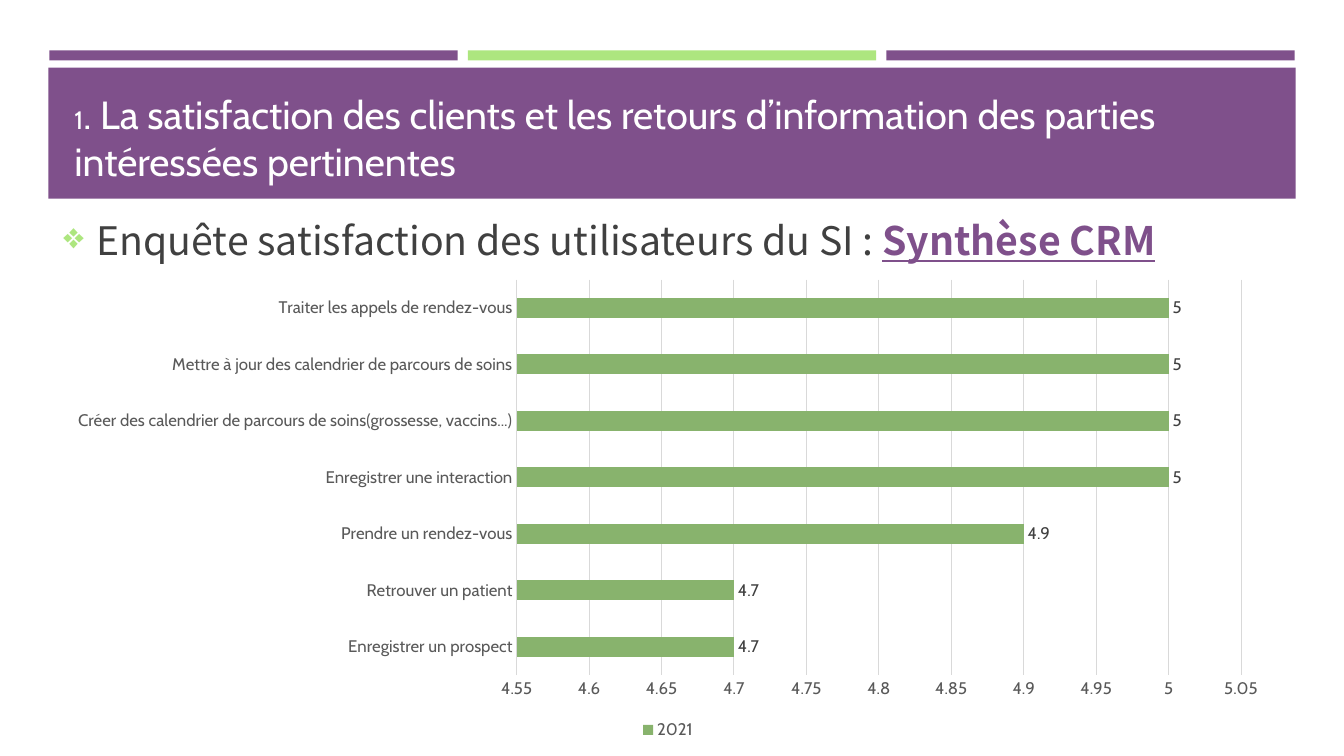
from lxml import etree
from pptx import Presentation
from pptx.chart.data import CategoryChartData
from pptx.dml.color import RGBColor
from pptx.enum import chart as ch, shapes, text
from pptx.oxml.ns import qn
from pptx.util import Inches, Pt

PURPLE, LIME, GREEN = "7F508B", "ADE67F", "88B36D"
WHITE, DARK, GREY, PALE = "FFFFFF", "404040", "595959", "D9D9D9"
SANS, NOTO = "Cabin", "Noto Sans CJK KR"

SCORES = [
    ("Enregistrer un prospect", 4.7),
    ("Retrouver un patient", 4.7),
    ("Prendre un rendez-vous", 4.9),
    ("Enregistrer une interaction", 5),
    ("Créer des calendrier de parcours de soins(grossesse, vaccins...)", 5),
    ("Mettre à jour des calendrier de parcours de soins", 5),
    ("Traiter les appels de rendez-vous", 5),
]


def paint(color, tint):
    color.rgb = RGBColor.from_string(tint)


def style(font, size, tint, face=SANS):
    font.size, font.name = Pt(size), face
    paint(font.color, tint)


def add_bar(slide, x, y, w, h, tint):
    bar = slide.shapes.add_shape(
        shapes.MSO_SHAPE.RECTANGLE, Inches(x), Inches(y), Inches(w), Inches(h))
    bar.shadow.inherit = False
    bar.fill.solid()
    paint(bar.fill.fore_color, tint)
    bar.line.fill.background()


def add_text(slide, x, y, w, h, anchor):
    """Add a wrapping text box and return its first paragraph."""
    box = slide.shapes.add_textbox(Inches(x), Inches(y), Inches(w), Inches(h))
    frame = box.text_frame
    frame.word_wrap = True
    frame.vertical_anchor = anchor
    return frame.paragraphs[0]


def add_run(para, words, size, tint, face=SANS):
    run = para.add_run()
    run.text = words
    style(run.font, size, tint, face)
    return run


def add_bullet(para, sign, tint, size, indent):
    props = para._p.get_or_add_pPr()
    props.set("marL", str(Inches(indent)))
    props.set("indent", str(-Inches(indent)))
    color = etree.SubElement(props, qn("a:buClr"))
    etree.SubElement(color, qn("a:srgbClr")).set("val", tint)
    etree.SubElement(props, qn("a:buSzPct")).set("val", str(size * 1000))
    etree.SubElement(props, qn("a:buChar")).set("char", sign)


def style_axis(axis):
    axis.major_tick_mark = axis.minor_tick_mark = ch.XL_TICK_MARK.NONE
    style(axis.tick_labels.font, 12, GREY)


def rule(line):
    line.width = Pt(0.75)
    paint(line.color, PALE)


def add_scores(slide, x, y, w, h):
    data = CategoryChartData()
    data.categories = [name for name, _ in SCORES]
    data.add_series("2021", [score for _, score in SCORES])
    chart = slide.shapes.add_chart(
        ch.XL_CHART_TYPE.BAR_CLUSTERED, Inches(x), Inches(y),
        Inches(w), Inches(h), data).chart
    style(chart.font, 10, "000000")
    chart.has_title = False

    # Axes
    cats, vals = chart.category_axis, chart.value_axis
    style_axis(cats)
    rule(cats.format.line)
    style_axis(vals)
    vals.format.line.fill.background()
    vals.minimum_scale, vals.maximum_scale, vals.major_unit = 4.55, 5.05, 0.05
    vals.has_major_gridlines = True
    rule(vals.major_gridlines.format.line)

    # Legend
    chart.has_legend = True
    chart.legend.position = ch.XL_LEGEND_POSITION.BOTTOM
    chart.legend.include_in_layout = False
    style(chart.legend.font, 12, GREY)

    # Bars and their labels
    plot = chart.plots[0]
    plot.gap_width = 182
    plot.vary_by_categories = False
    series = plot.series[0]
    series.format.fill.solid()
    paint(series.format.fill.fore_color, GREEN)
    labels = series.data_labels
    labels.show_value = True
    labels.position = ch.XL_LABEL_POSITION.OUTSIDE_END
    style(labels.font, 12, DARK)


def main():
    deck = Presentation()
    deck.slide_width, deck.slide_height = Inches(13.33), Inches(7.5)
    slide = deck.slides.add_slide(deck.slide_layouts[6])

    # Header bands
    for col, tint in enumerate([PURPLE, LIME, PURPLE]):
        add_bar(slide, 0.49 + 4.15 * col, 0.5, 4.05, 0.1, tint)
    add_bar(slide, 0.48, 0.67, 12.37, 1.3, PURPLE)

    # Title
    title = add_text(slide, 0.64, 0.77, 12.06, 1.11, text.MSO_ANCHOR.BOTTOM)
    add_run(title, "1", 18, WHITE)
    add_run(title, ". La satisfaction des clients et les retours d’information "
            "des parties intéressées pertinentes", 28, WHITE)

    # Survey line
    survey = add_text(slide, 0.53, 1.96, 12.19, 0.84, text.MSO_ANCHOR.MIDDLE)
    add_bullet(survey, "❖", LIME, 92, 0.33)
    survey.space_after = Pt(6)
    add_run(survey, "Enquête satisfaction des utilisateurs du SI : ",
            28, DARK, NOTO)
    link = add_run(survey, "Synthèse CRM", 28, PURPLE, NOTO)
    link.font.bold = link.font.underline = True

    # Scores
    add_scores(slide, 0.53, 2.68, 12.19, 4.7)
    deck.save("out.pptx")


if __name__ == "__main__":
    main()
